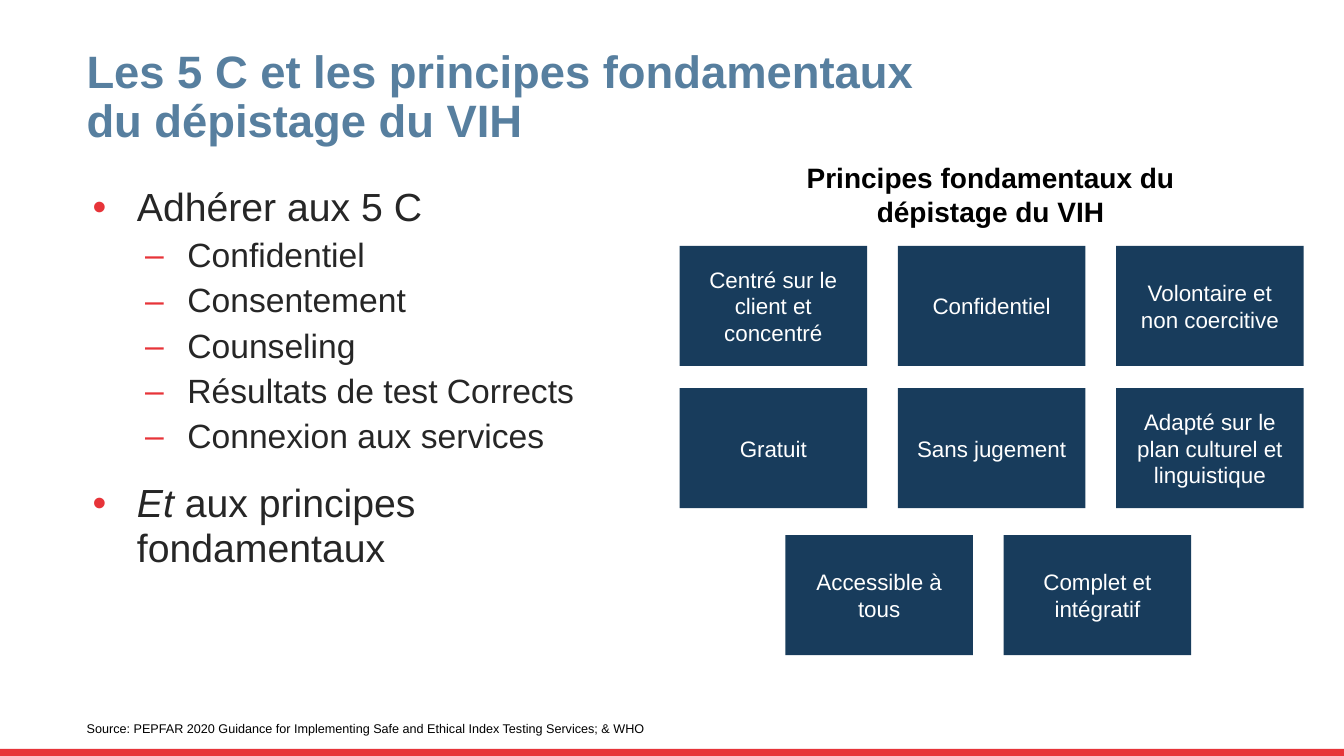
from dataclasses import dataclass

from lxml.etree import SubElement
from pptx import Presentation
from pptx.dml.color import RGBColor
from pptx.enum.shapes import MSO_SHAPE as Shape
from pptx.enum.text import MSO_ANCHOR as Anchor, PP_ALIGN as Align
from pptx.oxml.ns import qn
from pptx.util import Inches, Pt

RED = RGBColor(0xE7, 0x34, 0x39)
BLUE = RGBColor(0x57, 0x7F, 0x9F)
NAVY = RGBColor(0x18, 0x3C, 0x5C)
GREY = RGBColor(0x26, 0x26, 0x26)
BLACK = RGBColor(0, 0, 0)
WHITE = RGBColor(0xFF, 0xFF, 0xFF)

STEP, WIDE, HIGH = 2.165, 1.86, 1.19


@dataclass
class Label:
    text: str
    left: float
    top: float
    width: float
    height: float
    size: float
    color: RGBColor = BLACK
    bold: bool = False
    align: Align = Align.LEFT
    anchor: Anchor = Anchor.MIDDLE
    space: float = 1.0
    inset: float = 0.1


@dataclass
class Level:
    mark: str
    size: int
    left: float
    hang: float
    before: int


@dataclass
class Row:
    left: float
    top: float
    names: list[str]


LABELS = [
    Label("Les 5 C et les principes fondamentaux du dépistage du VIH",
          0.76, 0.54, 8.52, 0.87, 32.4, BLUE, bold=True, space=0.9),
    Label("Principes fondamentaux du dépistage du VIH",
          7.63, 1.54, 4.39, 0.77, 20, bold=True, align=Align.CENTER),
    Label("Source: PEPFAR 2020 Guidance for Implementing Safe and Ethical "
          "Index Testing Services; & WHO",
          0.79, 7.12, 5.95, 0.23, 9, anchor=Anchor.TOP, inset=0.07),
]

HEAD = Level("•", 28, 0.5, 0.44, 0)
ITEM = Level("–", 24, 1, 0.42, 5)
LAST = Level("•", 28, 0.5, 0.44, 18)
POINTS = [
    (HEAD, ["Adhérer aux 5 C"]),
    (ITEM, ["Confidentiel"]),
    (ITEM, ["Consentement"]),
    (ITEM, ["Counseling"]),
    (ITEM, ["Résultats de test Corrects"]),
    (ITEM, ["Connexion aux services"]),
    (LAST, ["Et", " aux principes fondamentaux"]),
]

ROWS = [
    Row(6.74, 2.44, ["Centré sur le client et concentré", "Confidentiel",
                     "Volontaire et non coercitive"]),
    Row(6.74, 3.85, ["Gratuit", "Sans jugement",
                     "Adapté sur le plan culturel et linguistique"]),
    Row(7.79, 5.31, ["Accessible à tous", "Complet et intégratif"]),
]


def style(run, size: float, color: RGBColor, bold: bool = False) -> None:
    font = run.font
    font.name, font.size, font.bold = "Arial", Pt(size), bold
    font.color.rgb = color


def fill_text(shape, label: Label) -> None:
    frame = shape.text_frame
    frame.word_wrap = True
    frame.vertical_anchor = label.anchor
    frame.margin_left = frame.margin_right = Inches(label.inset)
    frame.margin_top = frame.margin_bottom = Inches(label.inset / 2)
    frame.text = label.text
    para = frame.paragraphs[0]
    para.alignment, para.line_spacing = label.align, label.space
    style(para.runs[0], label.size, label.color, label.bold)


def add_label(slide, label: Label) -> None:
    box = slide.shapes.add_textbox(Inches(label.left), Inches(label.top),
                                   Inches(label.width), Inches(label.height))
    fill_text(box, label)


def add_rect(slide, left: float, top: float, width: float, height: float,
             color: RGBColor):
    rect = slide.shapes.add_shape(Shape.RECTANGLE, Inches(left), Inches(top),
                                  Inches(width), Inches(height))
    rect.shadow.inherit = False
    rect.fill.solid()
    rect.fill.fore_color.rgb = color
    rect.line.fill.background()
    return rect


def add_mark(para, level: Level) -> None:
    """Give a paragraph its hanging indent and red bullet."""
    props = para._p.get_or_add_pPr()
    props.set("marL", str(Inches(level.left)))
    props.set("indent", str(-Inches(level.hang)))
    tint = SubElement(props, qn("a:buClr"))
    SubElement(tint, qn("a:srgbClr"), val=str(RED))
    SubElement(props, qn("a:buFont"), typeface="Arial")
    SubElement(props, qn("a:buChar"), char=level.mark)


def add_points(slide) -> None:
    box = slide.shapes.add_textbox(Inches(0.76), Inches(1.79),
                                   Inches(5.68), Inches(4.76))
    frame = box.text_frame
    frame.word_wrap = True
    for i, (level, parts) in enumerate(POINTS):
        para = frame.add_paragraph() if i else frame.paragraphs[0]
        para.level = 1 if level is ITEM else 0
        para.line_spacing, para.space_before = 0.95, Pt(level.before)
        add_mark(para, level)
        for part in parts:
            run = para.add_run()
            run.text = part
            style(run, level.size, GREY)
            run.font.italic = part == "Et"


def add_row(slide, row: Row) -> None:
    for i, name in enumerate(row.names):
        left = row.left + i * STEP
        card = add_rect(slide, left, row.top, WIDE, HIGH, NAVY)
        fill_text(card, Label(name, left, row.top, WIDE, HIGH, 16, WHITE,
                              align=Align.CENTER))


def main() -> None:
    deck = Presentation()
    deck.slide_width, deck.slide_height = Inches(13.33), Inches(7.5)
    slide = deck.slides.add_slide(deck.slide_layouts[6])
    add_rect(slide, 0, 7.43, 13.33, 0.08, RED)
    for label in LABELS:
        add_label(slide, label)
    add_points(slide)
    for row in ROWS:
        add_row(slide, row)
    deck.save("out.pptx")


if __name__ == "__main__":
    main()
